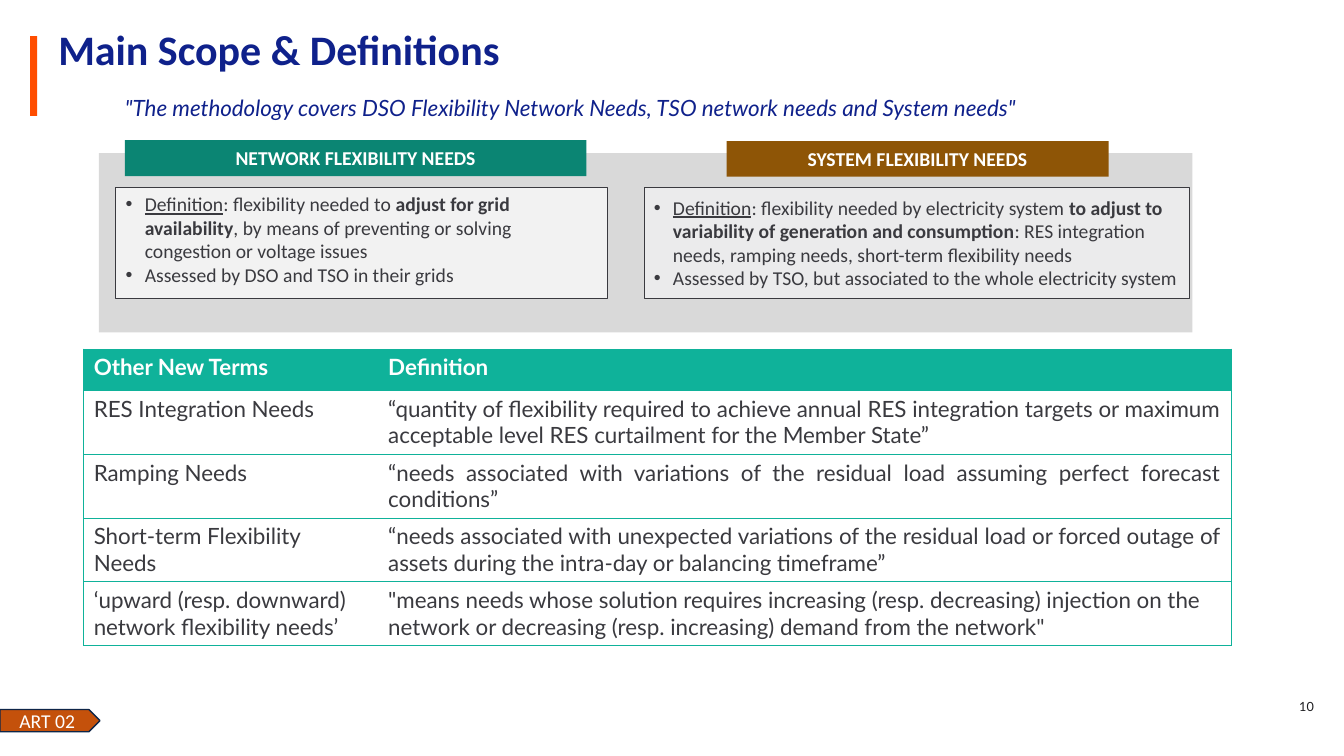
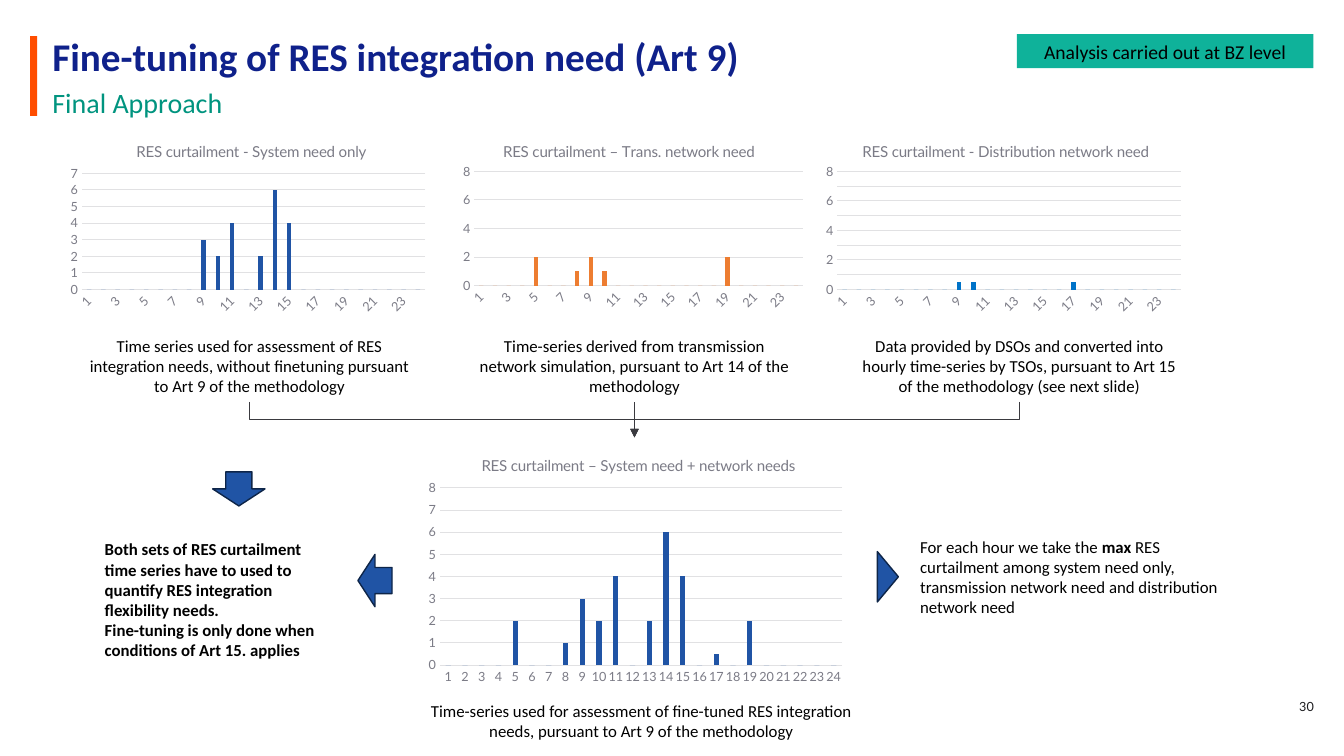
from lxml.etree import SubElement
from pptx import Presentation
from pptx.chart.data import CategoryChartData
from pptx.dml.color import RGBColor
from pptx.enum.chart import XL_CHART_TYPE, XL_TICK_MARK
from pptx.enum.shapes import MSO_CONNECTOR, MSO_SHAPE
from pptx.enum.text import MSO_ANCHOR, PP_ALIGN
from pptx.oxml import parse_xml
from pptx.oxml.ns import nsdecls, qn
from pptx.util import Cm, Pt

HUES = {
    "navy": "0F218B", "blue": "2054A5", "edge": "0E2548", "sky": "0073C8",
    "teal": "0FB29A", "green": "0B8573", "leaf": "00947F", "brown": "8E5506",
    "flame": "FF4D00", "rust": "C4510B", "orange": "ED7D31",
    "ink": "3A3A3F", "night": "1D1D20", "grey": "7B7B86", "rule": "E1E1E3",
    "panel": "D9D9D9", "pale": "F2F2F2", "mist": "EBEBEC",
    "black": "000000", "white": "FFFFFF",
}
LEFT, MID, RIGHT, FULL = (PP_ALIGN.LEFT, PP_ALIGN.CENTER,
                          PP_ALIGN.RIGHT, PP_ALIGN.JUSTIFY)


def hue(name):
    return RGBColor.from_string(HUES[name])


class Deck:
    """Shared style and the slide being built."""

    def __init__(self):
        self.prs = Presentation()
        self.prs.slide_width, self.prs.slide_height = Cm(33.87), Cm(19.05)
        self.shapes = None

    def page(self, number, title, x, y, size):
        """Start a slide with the side bar, title and page number."""
        self.shapes = self.prs.slides.add_slide(
            self.prs.slide_layouts[6]).shapes
        self.text((17.15, 17.32, 16.21, 1.02), [number], 9, "night",
                  font="Lato", align=RIGHT, anchor=MSO_ANCHOR.MIDDLE, lead=9)
        self.shape(MSO_SHAPE.RECTANGLE, (0.76, 0.91, 0.18, 2.01), "flame")
        self.text((x, y, 32.28, 0.99), [[(title, "b")]], size, "navy",
                  anchor=MSO_ANCHOR.MIDDLE, lead=32)

    def words(self, frame, paras, size, color, font="Calibri", align=LEFT,
              anchor=MSO_ANCHOR.TOP, lead=None, bullet=False):
        """Fill a frame; a paragraph is a string or a list of (text, marks)."""
        frame.word_wrap = True
        frame.vertical_anchor = anchor
        for i, runs in enumerate(paras):
            para = frame.add_paragraph() if i else frame.paragraphs[0]
            para.alignment = align
            if lead:
                para.line_spacing = Pt(lead)
            if bullet:
                props = para._p.get_or_add_pPr()
                props.set("marL", str(Cm(0.48)))
                props.set("indent", str(-Cm(0.48)))
                SubElement(props, qn("a:buFont"), typeface="Arial")
                SubElement(props, qn("a:buChar"), char="•")
            for part, marks in [(runs, "")] if isinstance(runs, str) else runs:
                run = para.add_run()
                run.text = part
                face = run.font
                face.name, face.size = font, Pt(size)
                face.color.rgb = hue(color)
                face.bold, face.italic = "b" in marks, "i" in marks
                face.underline = "u" in marks

    def text(self, box, paras, size=12, color="black", **style):
        item = self.shapes.add_textbox(*map(Cm, box))
        self.words(item.text_frame, paras, size, color, **style)
        return item

    def shape(self, kind, box, fill, line=None, width=1, turn=0):
        item = self.shapes.add_shape(kind, *map(Cm, box))
        item.shadow.inherit = False
        item.rotation = turn
        item.fill.solid()
        item.fill.fore_color.rgb = hue(fill)
        if line:
            item.line.color.rgb = hue(line)
            item.line.width = Pt(width)
        else:
            item.line.fill.background()
        return item

    def label(self, kind, box, fill, para, color="white", line=None):
        """A filled shape with one centred line of text."""
        item = self.shape(kind, box, fill, line)
        self.words(item.text_frame, [para], 14, color, align=MID,
                   anchor=MSO_ANCHOR.MIDDLE)

    def note(self, box, fill, paras, anchor):
        """An outlined box with bullets."""
        item = self.shape(MSO_SHAPE.RECTANGLE, box, fill, "ink", 0.5)
        self.words(item.text_frame, paras, 14, "ink", anchor=anchor,
                   bullet=True)

    def table(self, x, y, widths, heights, rows):
        grid = self.shapes.add_table(len(rows), len(widths), Cm(x), Cm(y),
                                     Cm(sum(widths)), Cm(sum(heights))).table
        grid.horz_banding = False
        for col, width in zip(grid.columns, widths):
            col.width = Cm(width)
        for r, cells in enumerate(rows):
            grid.rows[r].height = Cm(heights[r])
            for c, (para, align) in enumerate(cells):
                cell = grid.cell(r, c)
                if r:
                    cell.fill.background()
                else:
                    cell.fill.solid()
                    cell.fill.fore_color.rgb = hue("teal")
                self.words(cell.text_frame, [[(para, "" if r else "b")]], 16,
                           "ink" if r else "white", font="Lato", align=align)
                last = c == len(widths) - 1
                self.frame(cell, (c == 0, last, True, True))

    def frame(self, cell, shown):
        """Draw cell borders: left, right, top, bottom."""
        props = cell._tc.get_or_add_tcPr()
        for i, (side, on) in enumerate(zip("LRTB", shown)):
            paint = (f'<a:solidFill><a:srgbClr val="{HUES["teal"]}"/>'
                     '</a:solidFill>' if on else '<a:noFill/>')
            props.insert(i, parse_xml(
                f'<a:ln{side} {nsdecls("a")} w="{Pt(0.5)}">{paint}'
                f'</a:ln{side}>'))

    def place(self, part, spots, inner=False):
        """Give a chart part a fixed place, as fractions of the chart."""
        spot = part.find(qn("c:layout"))
        if spot is None:
            spot = parse_xml(f'<c:layout {nsdecls("c")}/>')
            part.insert(0, spot)
        fixed = SubElement(spot, qn("c:manualLayout"))
        if inner:
            SubElement(fixed, qn("c:layoutTarget"), val="inner")
        for mode in ("xMode", "yMode"):
            SubElement(fixed, qn("c:" + mode), val="edge")
        for key, val in zip("xywh", spots):
            SubElement(fixed, qn("c:" + key), val=str(val))

    def chart(self, box, title, vals, color, top, step, head, plot, turn=0):
        data = CategoryChartData()
        data.categories = [str(i + 1) for i in range(len(vals))]
        data.add_series("Series 1", vals)
        item = self.shapes.add_chart(XL_CHART_TYPE.COLUMN_CLUSTERED,
                                     *map(Cm, box), data)
        chart = item.chart
        chart.has_legend = False
        chart.font.name, chart.font.size = "Lato", Pt(9)
        chart.font.color.rgb = hue("ink")

        # Title
        chart.has_title = True
        self.words(chart.chart_title.text_frame, [title], 10.8, "grey",
                   font="Lato", align=MID)
        self.place(chart.chart_title._element, head)

        # Columns
        area = chart.plots[0]
        area.gap_width, area.overlap, area.vary_by_categories = 219, -27, False
        bars = area.series[0].format.fill
        bars.solid()
        bars.fore_color.rgb = hue(color)
        self.place(chart._chartSpace.chart.plotArea, plot, inner=True)

        # Axes
        cats, nums = chart.category_axis, chart.value_axis
        for axis in (cats, nums):
            axis.major_tick_mark = axis.minor_tick_mark = XL_TICK_MARK.NONE
            face = axis.tick_labels.font
            face.name, face.size = "Lato", Pt(9)
            face.color.rgb = hue("grey")
        nums.minimum_scale, nums.maximum_scale = 0, top
        nums.major_unit = step
        nums.format.line.fill.background()
        for line in (cats.format.line, nums.major_gridlines.format.line):
            line.color.rgb = hue("rule")
            line.width = Pt(0.75)
        body = cats._element.find(qn("c:txPr")).find(qn("a:bodyPr"))
        body.set("rot", str(turn * 60000))
        body.set("vert", "horz")
        return item

    def arrow(self, kind, ends, turn=0):
        item = self.shapes.add_connector(kind, *map(Cm, ends))
        item.line.color.rgb = hue("ink")
        item.line.width = Pt(0.5)
        props = item._element.spPr
        SubElement(props.find(qn("a:ln")), qn("a:tailEnd"), type="triangle")
        SubElement(props, qn("a:effectLst"))
        if turn:
            props.find(qn("a:xfrm")).set("rot", str(turn * 60000))
        return item

    def elbow(self, x1, y1, x2, y2):
        """A bent arrow that leaves and arrives vertically."""
        midx, midy = (x1 + x2) / 2, (y1 + y2) / 2
        half, tall = (y2 - y1) / 2, abs(x2 - x1) / 2
        if x2 < x1:
            half = -half
        self.arrow(MSO_CONNECTOR.ELBOW,
                   (midx + half, midy - tall, midx - half, midy + tall),
                   270 if x2 > x1 else 90)


def scope(deck):
    deck.page("10", "Main Scope & Definitions", 1.22, 0.81, 30)
    deck.text((2.9, 1.8, 28, 0.99), [[(
        '"The methodology covers DSO Flexibility Network Needs, '
        'TSO network needs and System needs"', "i")]],
        16, "navy", font="Lato", lead=32)

    # Two kinds of needs
    rect = MSO_SHAPE.RECTANGLE
    deck.shape(rect, (2.49, 3.86, 27.56, 4.52), "panel")
    deck.label(rect, (18.31, 3.56, 9.63, 0.89), "brown",
               [("SYSTEM FLEXIBILITY NEEDS", "b")])
    deck.label(rect, (3.15, 3.53, 11.63, 0.91), "green",
               [("NETWORK FLEXIBILITY NEEDS", "b")])
    deck.note((2.92, 4.72, 12.4, 2.79), "pale", [
        [("Definition", "u"), (": flexibility needed to ", ""),
         ("adjust for grid availability", "b"),
         (", by means of preventing or solving congestion or voltage issues",
          "")],
        "Assessed by DSO and TSO in their grids"], MSO_ANCHOR.TOP)
    deck.note((16.23, 4.72, 13.74, 2.79), "mist", [
        [("Definition", "u"),
         (": flexibility needed by electricity system ", ""),
         ("to adjust to variability of generation and consumption", "b"),
         (": RES integration needs, ramping needs, "
          "short-term flexibility needs", "")],
        "Assessed by TSO, but associated to the whole electricity system"],
        MSO_ANCHOR.MIDDLE)

    # Terms
    terms = [
        ("Other New Terms", "Definition", LEFT),
        ("RES Integration Needs",
         "“quantity of flexibility required to achieve annual RES integration "
         "targets or maximum acceptable level RES curtailment for the Member "
         "State”", FULL),
        ("Ramping Needs",
         "“needs associated with variations of the residual load assuming "
         "perfect forecast conditions”", FULL),
        ("Short-term Flexibility Needs",
         "“needs associated with unexpected variations of the residual load "
         "or forced outage of assets during the intra-day or balancing "
         "timeframe”", FULL),
        ("‘upward (resp. downward) network flexibility needs’",
         '"means needs whose solution requires increasing (resp. decreasing) '
         'injection on the network or decreasing (resp. increasing) demand '
         'from the network"', LEFT),
    ]
    deck.table(2.11, 8.79, (7.42, 21.49), [1.04] + [1.61] * 4,
               [((term, LEFT), (sense, align)) for term, sense, align in terms])
    deck.label(MSO_SHAPE.PENTAGON, (0, 17.88, 2.52, 0.56), "rust", "ART 02",
               line="edge")


def tuning(deck):
    deck.page("30", "Fine-tuning of RES integration need (Art 9)",
              1.07, 0.94, 28)
    deck.text((1.07, 1.93, 32.28, 1.22), ["Final Approach"], 20, "leaf",
              anchor=MSO_ANCHOR.MIDDLE, lead=26)
    deck.label(MSO_SHAPE.RECTANGLE, (25.63, 0.86, 7.47, 0.86), "teal",
               "Analysis carried out at BZ level", "black")

    # Three inputs: title, values by hour, colour, axis, places, caption
    inputs = [
        ("RES curtailment - System need only",
         {9: 3, 10: 2, 11: 4, 13: 2, 14: 6, 15: 4}, "blue", 7, 1,
         (0.19, 0.07), (0.05, 0.25, 0.93, 0.6),
         "Time series used for assessment of RES integration needs, without "
         "finetuning pursuant to Art 9 of the methodology"),
        ("RES curtailment – Trans. network need",
         {5: 2, 8: 1, 9: 2, 10: 1, 19: 2}, "orange", 8, 2,
         (0.16, 0.07), (0.09, 0.24, 0.89, 0.59),
         "Time-series derived from transmission network simulation, pursuant "
         "to Art 14 of the methodology"),
        ("RES curtailment - Distribution network need",
         {9: 0.5, 10: 0.5, 17: 0.5}, "sky", 8, 1,
         (0.11, 0.07), (0.05, 0.24, 0.93, 0.61),
         "Data provided by DSOs and converted into hourly time-series by "
         "TSOs, pursuant to Art 15 of the methodology (see next slide)"),
    ]
    needs, notes = [], []
    for i, (title, hours, color, top, step, head, plot, para) in enumerate(
            inputs):
        needs.append([hours.get(h, 0) for h in range(1, 25)])
        deck.chart((1.6 + 9.52 * i, 3.15, 9.3, 4.88), title, needs[-1],
                   color, top, step, head, plot, turn=-45)
        notes.append(deck.text((2.01 + 9.7 * i, 8.33, 8.56, 1.8), [para],
                               align=MID))

    # Result: the highest need in each hour
    total = deck.chart((10.54, 11.02, 10.9, 6.38),
                       "RES curtailment – System need + network needs",
                       [max(hour) for hour in zip(*needs)], "blue", 8, 1,
                       (0.14, 0.06), (0.05, 0.2, 0.93, 0.7))
    deck.text((10.54, 17.53, 11.25, 1.27), [
        "Time-series used for assessment of fine-tuned RES integration "
        "needs, pursuant to Art 9 of the methodology"], align=MID)

    # Remarks on both sides
    deck.text((22.94, 13.39, 8.56, 2.31), [[
        ("For each hour we take the ", ""), ("max ", "b"),
        ("RES curtailment among system need only, transmission network need "
         "and distribution network need", "")]])
    deck.text((2.39, 13.46, 6.2, 3.33), [
        [("Both sets of RES curtailment time series have to used to quantify "
          "RES integration flexibility needs.", "b")],
        [("Fine-tuning is only done when conditions of Art 15. applies",
          "b")]])
    for kind, box, turn in (
            (MSO_SHAPE.ISOSCELES_TRIANGLE, (21.74, 14.27, 1.27, 0.53), 90),
            (MSO_SHAPE.DOWN_ARROW, (5.36, 11.89, 1.32, 0.86), 0),
            (MSO_SHAPE.DOWN_ARROW, (8.79, 14.2, 1.32, 0.86), 90)):
        deck.shape(kind, box, "blue", "edge", turn=turn)

    # Arrows into the result
    for x in (6.29, 25.69):
        deck.elbow(x, 10.13, 15.99, 11.02)
    stem = deck.arrow(MSO_CONNECTOR.STRAIGHT, (15.99, 10.13, 15.99, 11.02))
    stem.begin_connect(notes[1], 2)
    stem.end_connect(total, 0)


def main():
    deck = Deck()
    scope(deck)
    tuning(deck)
    deck.prs.save("out.pptx")


if __name__ == "__main__":
    main()
